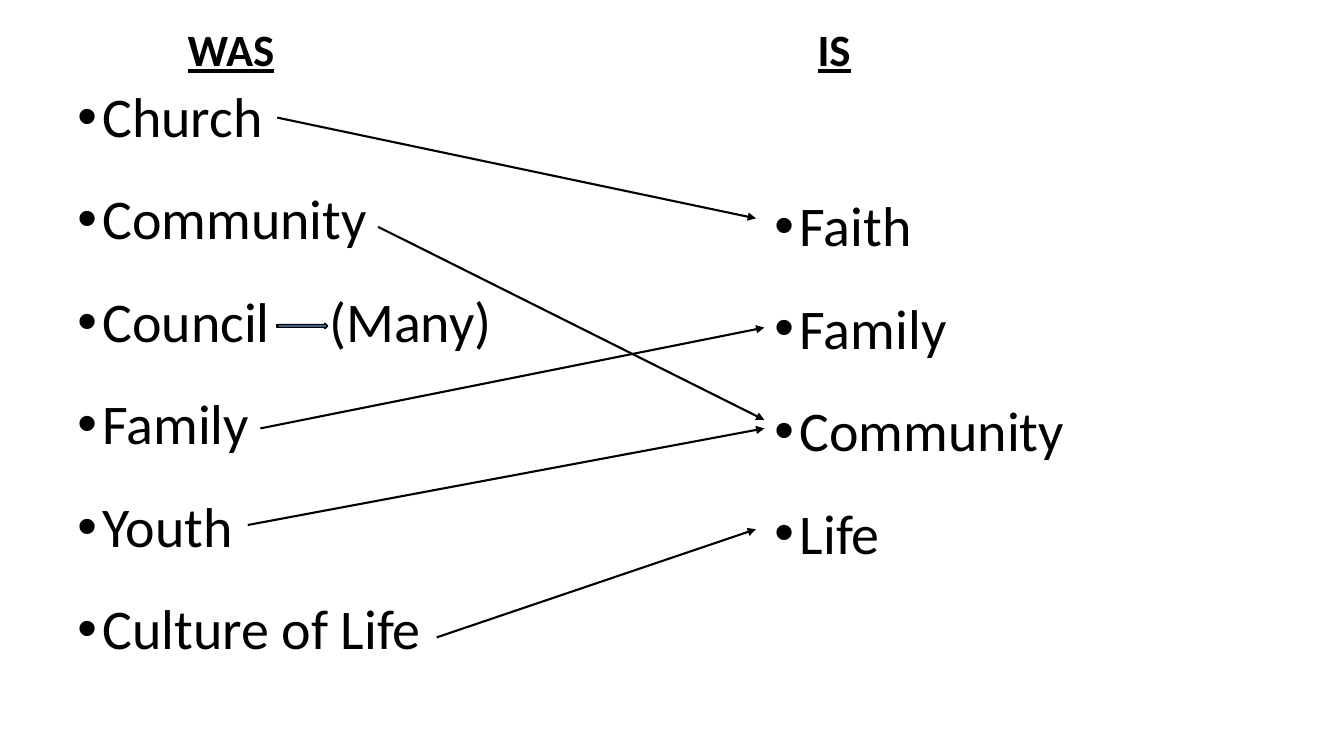
from lxml import etree
from pptx import Presentation
from pptx import util as u
from pptx.dml.color import RGBColor
from pptx.enum import shapes, text
from pptx.oxml.ns import qn

PX = 9525
HUES = {"ink": "000000", "blue": "5B9BD5"}
WAS = ["Church", "Community", "Council\t(Many)", "Family", "Youth", "Culture of Life"]
IS = ["Faith", "Family", "Community", "Life"]
LINKS = [
    (264, 112, 720, 208),
    (360, 216, 728, 400),
    (248, 408, 728, 312),
    (416, 607, 720, 504),
    (236, 500, 728, 408),
]


def px(*vals):
    """Turn pixel lengths into EMU."""
    return [u.Emu(v * PX) for v in vals]


def hue(name):
    """Look up a colour by name."""
    return RGBColor.from_string(HUES[name])


def place(shape, box):
    """Move a shape into a pixel box."""
    shape.left, shape.top, shape.width, shape.height = px(*box)


def dot(para, tab):
    """Give a paragraph a hanging bullet and one tab stop."""
    props = para._p.get_or_add_pPr()
    props.set("marL", str(24 * PX))
    props.set("indent", str(-24 * PX))
    etree.SubElement(props, qn("a:buFont"), typeface="Arial")
    etree.SubElement(props, qn("a:buChar"), char="•")
    tabs = etree.SubElement(props, qn("a:tabLst"))
    etree.SubElement(tabs, qn("a:tab"), pos=str(tab * PX), algn="l")


def write(shape, lines, size, bold=False, under=False, wrap=True,
          space=1.0, gap=0, after=0, bullet=False, tab=240):
    """Fill a shape with formatted paragraphs."""
    frame = shape.text_frame
    frame.word_wrap = wrap
    frame.auto_size = text.MSO_AUTO_SIZE.NONE
    frame.vertical_anchor = text.MSO_ANCHOR.TOP
    for i, line in enumerate(lines):
        para = frame.paragraphs[0] if i == 0 else frame.add_paragraph()
        if bullet:
            dot(para, tab)
        para.line_spacing = space
        para.space_before = u.Pt(gap if i else 0)
        para.space_after = u.Pt(after)
        run = para.add_run()
        run.text = line
        font = run.font
        font.name, font.size = "Calibri", u.Pt(size)
        font.bold, font.underline = bold, under
        font.color.rgb = hue("ink")


def column(head, body, title, items, spot, box):
    """Set a heading and the bulleted list below it."""
    place(head, spot)
    write(head, [title], 32, bold=True, under=True, wrap=False)
    place(body, box)
    write(body, items, 40, space=0.9, gap=24, after=6, bullet=True)


def link(slide, ends):
    """Draw one arrow between the lists."""
    line = slide.shapes.add_connector(shapes.MSO_CONNECTOR.STRAIGHT, *px(*ends))
    line.line.color.rgb = hue("ink")
    line.line.width = u.Pt(1.5)
    etree.SubElement(line.line._get_or_add_ln(), qn("a:tailEnd"), type="triangle")
    etree.SubElement(line._element.spPr, qn("a:effectLst"))


def arrow(slide, box):
    """Draw the small striped arrow in the council row."""
    shape = slide.shapes.add_shape(shapes.MSO_SHAPE.STRIPED_RIGHT_ARROW, *px(*box))
    shape.shadow.inherit = False
    shape.fill.solid()
    shape.fill.fore_color.rgb = hue("blue")
    shape.line.color.rgb = hue("ink")
    shape.line.width = u.Pt(1)


def main():
    """Build and save the slide."""
    deck = Presentation()
    deck.slide_width, deck.slide_height = px(1280, 720)
    slide = deck.slides.add_slide(deck.slide_layouts[4])
    title, *slots = slide.placeholders
    title._element.getparent().remove(title._element)
    column(*slots[:2], "WAS", WAS, (169, 16, 103, 61), (64, 80, 424, 600))
    column(*slots[2:], "IS", IS, (769, 16, 51, 61), (728, 184, 400, 480))
    for ends in LINKS:
        link(slide, ends)
    arrow(slide, (264, 308, 48, 5))
    deck.save("out.pptx")


if __name__ == "__main__":
    main()
